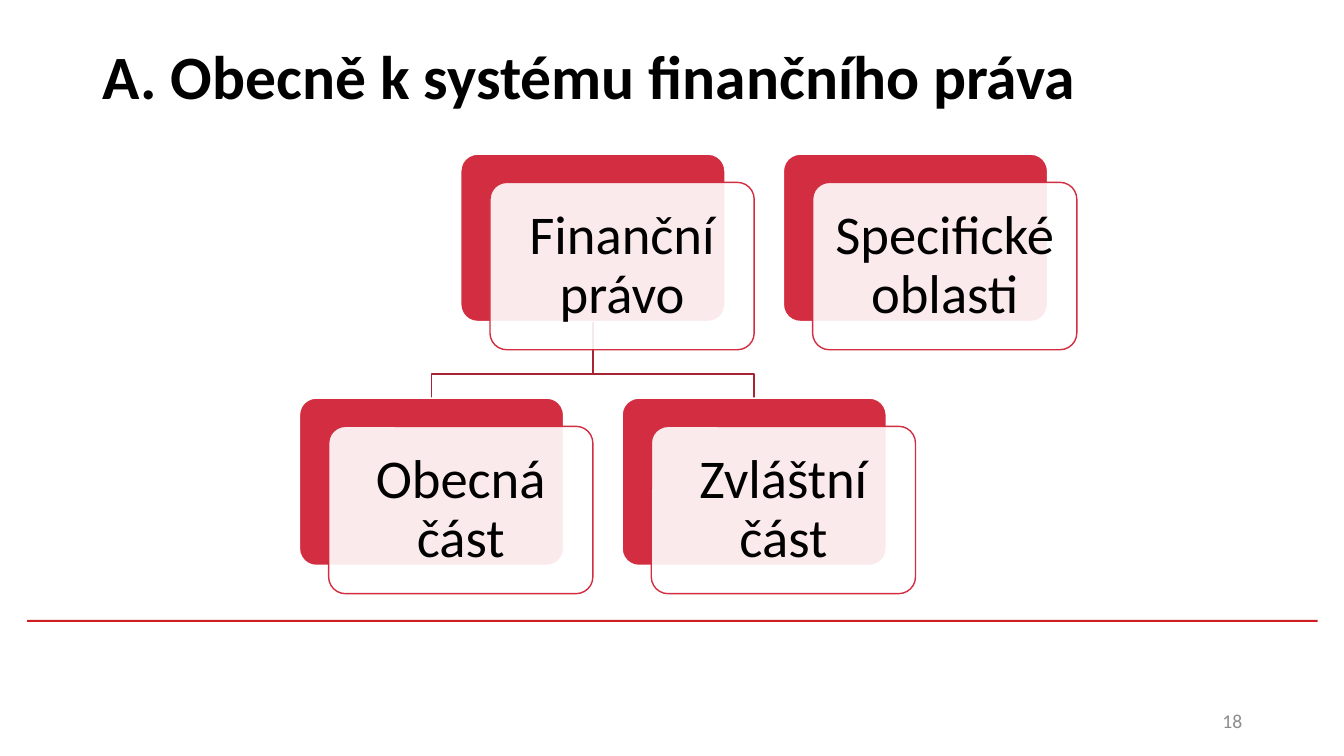
from dataclasses import dataclass

from lxml import etree
from pptx import Presentation
from pptx.dml.color import RGBColor
from pptx.enum.shapes import MSO_SHAPE
from pptx.enum.text import MSO_ANCHOR, PP_ALIGN
from pptx.oxml.ns import qn
from pptx.util import Inches, Pt

RECT = MSO_SHAPE.RECTANGLE
ROUND = MSO_SHAPE.ROUNDED_RECTANGLE
MIDDLE = MSO_ANCHOR.MIDDLE
LEFT, CENTER, RIGHT = PP_ALIGN.LEFT, PP_ALIGN.CENTER, PP_ALIGN.RIGHT


@dataclass(frozen=True)
class Theme:
    font: str = "Calibri"
    black: str = "000000"
    white: str = "FFFFFF"
    gray: str = "8C8C8C"
    red: str = "D22D40"
    dark: str = "A82433"
    rule: str = "CD1F21"
    title: int = 44
    card: int = 39
    number: int = 14


THEME = Theme()
CARD_W, CARD_H = 2.62, 1.66
SHIFT_X, SHIFT_Y = 0.29, 0.28
STEP_X, STEP_Y = 3.2, 2.42
FORK_Y = 0.52


def color(code):
    return RGBColor.from_string(code)


def write(shape, text, size, tint=THEME.black, bold=False, align=LEFT,
          inset=None, spacing=None):
    frame = shape.text_frame
    frame.word_wrap = True
    frame.vertical_anchor = MIDDLE
    if inset is not None:
        frame.margin_left = frame.margin_right = Inches(inset)
        frame.margin_top = frame.margin_bottom = Inches(inset)
    para = frame.paragraphs[0]
    para.text = text
    para.alignment = align
    para.line_spacing = spacing
    font = para.font
    font.name, font.size, font.bold = THEME.font, Pt(size), bold
    font.color.rgb = color(tint)


def add_box(slide, kind, box, fill, line=None, alpha=None):
    shape = slide.shapes.add_shape(kind, *map(Inches, box))
    shape.shadow.inherit = False
    shape.fill.solid()
    shape.fill.fore_color.rgb = color(fill)
    if alpha is not None:
        tint = shape.fill._xPr.find(qn("a:solidFill"))[0]
        etree.SubElement(tint, qn("a:alpha")).set("val", str(alpha * 1000))
    if line:
        shape.line.color.rgb = color(line)
        shape.line.width = Pt(1)
    else:
        shape.line.fill.background()
    if kind == ROUND:
        shape.adjustments[0] = 0.1
    return shape


def add_card(slide, left, top, text):
    add_box(slide, ROUND, (left, top, CARD_W, CARD_H), THEME.red, THEME.white)
    front = add_box(slide, ROUND,
                    (left + SHIFT_X, top + SHIFT_Y, CARD_W, CARD_H),
                    THEME.white, THEME.red, alpha=90)
    write(front, text, THEME.card, align=CENTER, inset=0.12, spacing=0.9)


def add_branch(slide, start, end):
    (x, y), (end_x, end_y) = start, end
    bend = y + FORK_Y
    points = [(x, bend), (end_x, bend), (end_x, end_y)]
    path = slide.shapes.build_freeform(Inches(x), Inches(y))
    path.add_line_segments([(Inches(a), Inches(b)) for a, b in points],
                           close=False)
    branch = path.convert_to_shape()
    branch.shadow.inherit = False
    branch.fill.background()
    branch.line.color.rgb = color(THEME.dark)
    branch.line.width = Pt(1)


def add_tree(slide, left, top):
    root = left + STEP_X / 2
    low = top + STEP_Y
    lefts = [left, left + STEP_X]
    # Branches lie behind the cards
    for x in reversed(lefts):
        add_branch(slide, (root + CARD_W / 2, top + CARD_H),
                   (x + CARD_W / 2, low))
    # Top row, then the two parts below
    add_card(slide, root, top, "Finanční právo")
    for x, text in zip(lefts, ["Obecná část", "Zvláštní část"]):
        add_card(slide, x, low, text)
    add_card(slide, root + STEP_X, top, "Specifické oblasti")


def add_title(slide, box, text):
    title = slide.shapes.title
    title.left, title.top, title.width, title.height = map(Inches, box)
    write(title, text, THEME.title, bold=True)


def add_footer(slide, box, text):
    number = slide.shapes.add_textbox(*map(Inches, box))
    write(number, text, THEME.number, THEME.gray, align=RIGHT)


def main():
    deck = Presentation()
    deck.slide_width, deck.slide_height = Inches(13.33), Inches(7.5)
    slide = deck.slides.add_slide(deck.slide_layouts[5])
    # Rule, title and page number
    add_box(slide, RECT, (0.27, 6.15, 12.8, 0.02), THEME.rule)
    add_title(slide, (0.92, 0.02, 11.5, 1.45),
              "A. Obecně k systému finančního práva")
    add_footer(slide, (9.42, 6.95, 3, 0.4), "18")
    # Hierarchy of financial law
    add_tree(slide, 2.97, 1.53)
    deck.save("out.pptx")


if __name__ == "__main__":
    main()
